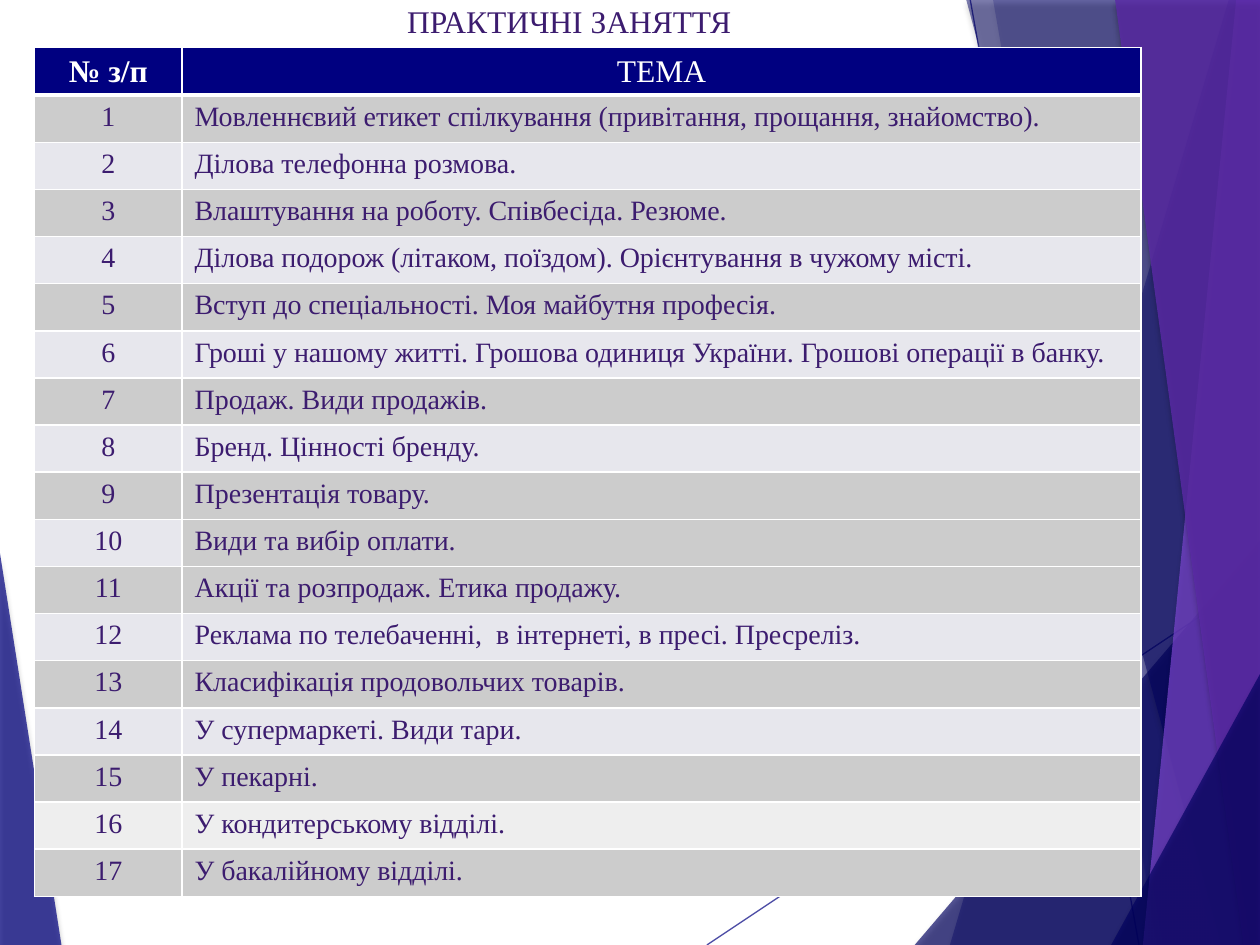
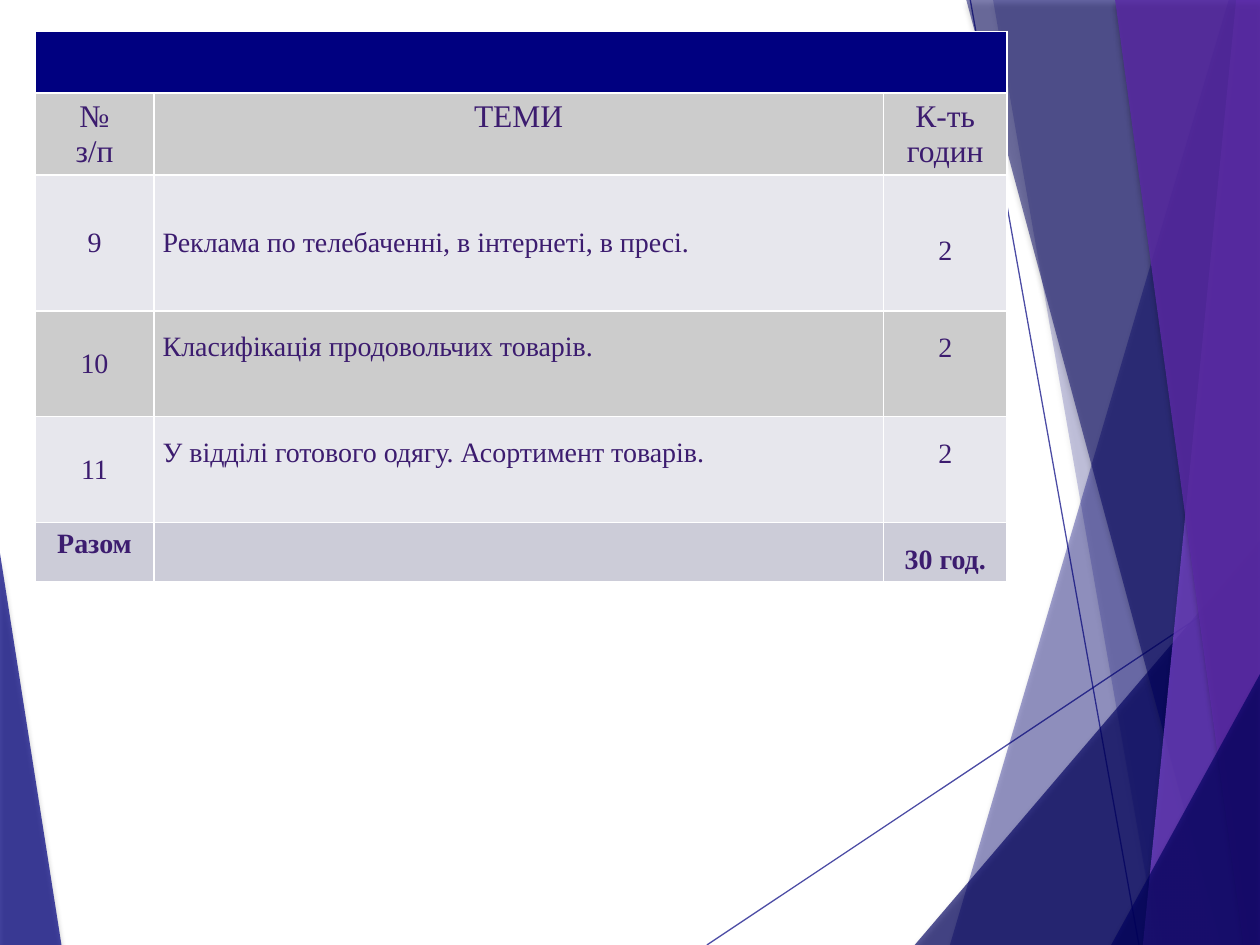
"""Build two slides that list the practical lessons of a language course."""
from dataclasses import dataclass

from lxml import etree
from pptx import Presentation
from pptx import util as u
from pptx.dml import color as c
from pptx.enum import shapes, text
from pptx.oxml import ns


@dataclass(frozen=True)
class Theme:
    font: str = "Times New Roman"
    heading_size: int = 18
    body_size: int = 16
    ink: str = "3C1C6F"
    white: str = "FFFFFF"
    black: str = "000000"
    navy: str = "000080"
    deep_navy: str = "000060"
    lilac: str = "7B46D0"
    purple: str = "5A2AA6"
    grey: str = "CCCCCC"
    pale: str = "E7E7ED"
    light: str = "EEEEEE"
    total: str = "CCCCD8"
    thin: float = 0.96
    thick: float = 3


THEME = Theme()
WIDTH, HEIGHT = 25.4, 19.05
CENTER, LEFT = text.PP_ALIGN.CENTER, text.PP_ALIGN.LEFT
MIDDLE, TOP = text.MSO_ANCHOR.MIDDLE, text.MSO_ANCHOR.TOP
TITLE_ONLY, BLANK = 5, 6
NARROW = 0.18

LESSONS = [
    "Мовленнєвий етикет спілкування (привітання, прощання, знайомство).",
    "Ділова телефонна розмова.",
    "Влаштування на роботу. Співбесіда. Резюме.",
    "Ділова подорож (літаком, поїздом). Орієнтування в чужому місті.",
    "Вступ до спеціальності. Моя майбутня професія.",
    "Гроші у нашому житті. Грошова одиниця України. Грошові операції в банку.",
    "Продаж. Види продажів.",
    "Бренд. Цінності бренду.",
    "Презентація товару.",
    "Види та вибір оплати.",
    "Акції та розпродаж. Етика продажу.",
    "Реклама по телебаченні,  в інтернеті, в пресі. Пресреліз.",
    "Класифікація продовольчих товарів.",
    "У супермаркеті. Види тари.",
    "У пекарні.",
    "У кондитерському відділі.",
    "У бакалійному відділі.",
]
TOPICS = [
    ("9", "Реклама по телебаченні, в інтернеті, в пресі."),
    ("10", "Класифікація продовольчих товарів."),
    ("11", "У відділі готового одягу. Асортимент товарів."),
]


class Deck:
    """Hold the theme, the presentation and the current slide."""

    def __init__(self, theme):
        self.theme = theme
        self.presentation = Presentation()
        self.presentation.slide_width = u.Cm(WIDTH)
        self.presentation.slide_height = u.Cm(HEIGHT)
        self.slide = None

    def add_slide(self, layout):
        layouts = self.presentation.slide_layouts
        self.slide = self.presentation.slides.add_slide(layouts[layout])

    def share(self, shape):
        tree = self.presentation.slide_master.shapes.element
        tree.append(shape.element)
        properties = shape.element.find(".//" + ns.qn("p:cNvPr"))
        properties.set("id", str(100 + len(tree)))

    def fade(self, shape, opacity):
        fill = shape.element.find(".//" + ns.qn("a:srgbClr"))
        etree.SubElement(fill, ns.qn("a:alpha"), val=str(opacity * 1000))

    def facet(self, points, fill, opacity):
        start, *others = [(u.Cm(x), u.Cm(y)) for x, y in points]
        builder = self.slide.shapes.build_freeform(*start)
        builder.add_line_segments(others, close=True)
        shape = builder.convert_to_shape()
        shape.fill.solid()
        shape.fill.fore_color.rgb = c.RGBColor.from_string(fill)
        shape.line.fill.background()
        self.fade(shape, opacity)
        shape.shadow.inherit = False
        effects = shape.element.find(".//" + ns.qn("a:effectLst"))
        shadow = etree.SubElement(
            effects, ns.qn("a:outerShdw"), blurRad=str(u.Pt(3)),
            dist=str(u.Pt(2)), dir="5400000", rotWithShape="0")
        shade = etree.SubElement(shadow, ns.qn("a:srgbClr"), val=self.theme.black)
        etree.SubElement(shade, ns.qn("a:alpha"), val="35000")
        self.share(shape)

    def band(self, top, bottom, fill, opacity):
        points = [(top, 0), (bottom, HEIGHT), (WIDTH, HEIGHT), (WIDTH, 0)]
        self.facet(points, fill, opacity)

    def corner(self, left, top, fill, opacity):
        points = [(left, HEIGHT), (WIDTH, top), (WIDTH, HEIGHT)]
        self.facet(points, fill, opacity)

    def ray(self, *ends):
        connector = self.slide.shapes.add_connector(
            shapes.MSO_CONNECTOR.STRAIGHT, *[u.Cm(end) for end in ends])
        connector.line.color.rgb = c.RGBColor.from_string(self.theme.navy)
        connector.line.width = u.Pt(0.75)
        self.fade(connector, 70)
        etree.SubElement(connector.element.spPr, ns.qn("a:effectLst"))
        self.share(connector)

    def backdrop(self):
        theme = self.theme
        self.facet([(0, 11.15), (1.24, HEIGHT), (0, HEIGHT)], theme.navy, 70)
        self.ray(14.25, HEIGHT, WIDTH, 11.62)
        self.ray(19.56, 0, 22.96, HEIGHT)
        self.band(24.77, 19.15, theme.navy, 36)
        self.band(20.02, 23.34, theme.navy, 20)
        self.corner(18.44, 10.9, theme.deep_navy, 66)
        self.band(19.48, 24.61, theme.deep_navy, 50)
        self.band(24.92, 23.04, theme.lilac, 70)
        self.band(22.48, 25.07, theme.purple, 82)
        self.corner(22.4, 13.59, theme.deep_navy, 66)

    def add_words(self, paragraph, words, size, ink=None, bold=False,
                  align=CENTER):
        paragraph.alignment = align
        run = paragraph.add_run()
        run.text = words
        run.font.name = self.theme.font
        run.font.size = u.Pt(size)
        run.font.bold = bold
        run.font.color.rgb = c.RGBColor.from_string(ink or self.theme.ink)

    def title(self, words, left, top, width, height):
        shape = self.slide.shapes.title
        shape.left, shape.top = u.Cm(left), u.Cm(top)
        shape.width, shape.height = u.Cm(width), u.Cm(height)
        frame = shape.text_frame
        frame.word_wrap = True
        frame.auto_size = text.MSO_AUTO_SIZE.NONE
        frame.vertical_anchor = TOP
        frame.margin_top = frame.margin_bottom = u.Cm(0.05)
        self.add_words(frame.paragraphs[0], words, self.theme.heading_size)

    def table(self, left, top, columns, rows):
        frame = self.slide.shapes.add_table(
            len(rows), len(columns), u.Cm(left), u.Cm(top),
            u.Cm(sum(columns)), u.Cm(sum(rows)))
        table = frame.table
        table.first_row = table.horz_banding = False
        for column, width in zip(table.columns, columns):
            column.width = u.Cm(width)
        for row, height in zip(table.rows, rows):
            row.height = u.Cm(height)
        return table

    def paint(self, cell, fill, above=None, below=None):
        thin = self.theme.thin
        sides = {"L": thin, "R": thin, "T": above or thin, "B": below or thin}
        properties = cell._tc.get_or_add_tcPr()
        for side, width in sides.items():
            line = etree.SubElement(
                properties, ns.qn("a:ln" + side), w=str(u.Pt(width)))
            solid = etree.SubElement(line, ns.qn("a:solidFill"))
            etree.SubElement(solid, ns.qn("a:srgbClr"), val=self.theme.white)
        cell.fill.solid()
        cell.fill.fore_color.rgb = c.RGBColor.from_string(fill)

    def fill_cell(self, cell, words, size=None, anchor=TOP, side=None,
                  above=None, spacing=None, after=None, **style):
        cell.vertical_anchor = anchor
        if side is not None:
            cell.margin_left = cell.margin_right = u.Cm(side)
        if above is not None:
            cell.margin_top = u.Cm(above)
        frame = cell.text_frame
        for index, line in enumerate(words.split("\n")):
            paragraph = frame.add_paragraph() if index else frame.paragraphs[0]
            if spacing:
                paragraph.line_spacing = spacing
            if after:
                paragraph.space_after = u.Pt(after)
            self.add_words(paragraph, line, size or self.theme.body_size, **style)


def lessons_slide(deck):
    theme = deck.theme
    deck.title("ПРАКТИЧНІ ЗАНЯТТЯ", 5.1, 0, 12.75, 0.95)
    table = deck.table(0.7, 0.96, [2.97, 19.33], [0.95] * (len(LESSONS) + 1))
    for column, words in enumerate(["№ з/п", "ТЕМА"]):
        cell = table.cell(0, column)
        deck.paint(cell, theme.navy, below=theme.thick)
        deck.fill_cell(cell, words, theme.heading_size, ink=theme.white,
                       bold=column == 0)
    special = {(10, 1): theme.grey, (16, 0): theme.light, (16, 1): theme.light}
    for number, lesson in enumerate(LESSONS, 1):
        band = theme.grey if number % 2 else theme.pale
        for column, words in enumerate([str(number), lesson]):
            cell = table.cell(number, column)
            deck.paint(cell, special.get((number, column), band),
                       above=theme.thick if number == 1 else None)
            deck.fill_cell(cell, words, align=LEFT if column else CENTER)


def hours_slide(deck):
    theme = deck.theme
    table = deck.table(0.71, 0.63, [2.39, 14.71, 2.49],
                       [1.24, 1.65, 2.74, 2.13, 2.13, 0.97])
    fills = [theme.navy, theme.grey, theme.pale, theme.grey, theme.pale,
             theme.total]
    for row, fill in enumerate(fills):
        for column in range(3):
            deck.paint(table.cell(row, column), fill)
    table.cell(0, 0).merge(table.cell(0, 2))
    for column, words in enumerate(["№\nз/п", "ТЕМИ", "К-ть годин"]):
        deck.fill_cell(table.cell(1, column), words, theme.heading_size)
    for row, (number, topic) in enumerate(TOPICS, 2):
        tall = row == 2
        anchor = MIDDLE if tall else TOP
        deck.fill_cell(table.cell(row, 0), number, anchor=MIDDLE)
        deck.fill_cell(table.cell(row, 1), topic, anchor=anchor, side=NARROW,
                       above=None if tall else 0.42, align=LEFT)
        deck.fill_cell(table.cell(row, 2), "2", anchor=anchor, side=NARROW,
                       spacing=1.5, after=10 if tall else None)
    deck.fill_cell(table.cell(5, 0), "Разом", bold=True)
    deck.fill_cell(table.cell(5, 2), "30 год.", side=NARROW, spacing=1.5,
                   bold=True)


def main():
    deck = Deck(THEME)
    deck.add_slide(TITLE_ONLY)
    deck.backdrop()
    lessons_slide(deck)
    deck.add_slide(BLANK)
    hours_slide(deck)
    deck.presentation.save("out.pptx")


if __name__ == "__main__":
    main()
